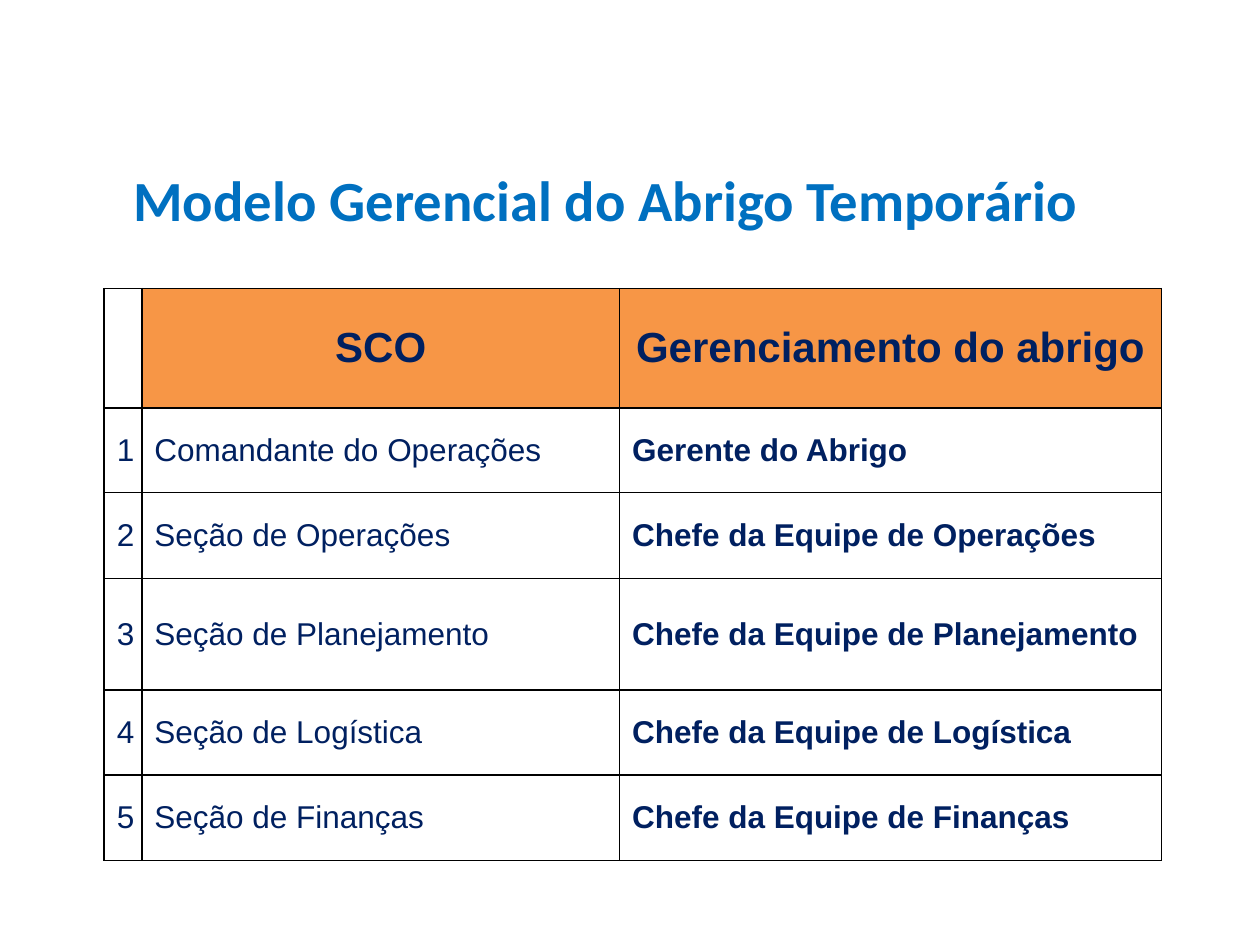
from dataclasses import dataclass

from lxml import etree
from pptx import Presentation
from pptx.dml.color import RGBColor
from pptx.enum.text import MSO_ANCHOR, PP_ALIGN
from pptx.oxml.ns import qn
from pptx.util import Cm, Pt

MIDDLE = MSO_ANCHOR.MIDDLE
LEFT, CENTER, JUSTIFY = PP_ALIGN.LEFT, PP_ALIGN.CENTER, PP_ALIGN.JUSTIFY


@dataclass(frozen=True)
class Theme:
    blue: RGBColor = RGBColor(0x00, 0x70, 0xC0)
    navy: RGBColor = RGBColor(0x00, 0x20, 0x60)
    orange: RGBColor = RGBColor(0xF7, 0x96, 0x46)
    line: str = "000000"
    title: Pt = Pt(32.4)
    head: Pt = Pt(24)
    body: Pt = Pt(18)


theme = Theme()
INDENT = Cm(0.97)


def add_borders(cell):
    props = cell._tc.get_or_add_tcPr()
    for spot, side in enumerate(("lnL", "lnR", "lnT", "lnB")):
        line = etree.Element(qn(f"a:{side}"), w=str(Pt(1)))
        fill = etree.SubElement(line, qn("a:solidFill"))
        etree.SubElement(fill, qn("a:srgbClr"), val=theme.line)
        props.insert(spot, line)


def set_font(para, name, size, color, bold):
    font = para.font
    font.name, font.size, font.bold = name, size, bold
    font.color.rgb = color


prs = Presentation()
prs.slide_width, prs.slide_height = Cm(25.4), Cm(19.05)
slide = prs.slides.add_slide(prs.slide_layouts[5])

title = slide.shapes.title
title.left, title.top, title.width, title.height = Cm(1.5), Cm(2.41), Cm(21.41), Cm(3.18)
title.text_frame.text = "Modelo Gerencial do Abrigo Temporário"
title.text_frame.vertical_anchor = MIDDLE
para = title.text_frame.paragraphs[0]
para.alignment = CENTER
set_font(para, "Calibri", theme.title, theme.blue, True)

rows = [
    ("", "SCO", "Gerenciamento do abrigo "),
    ("1", "Comandante do Operações", "Gerente do Abrigo"),
    ("2", "Seção de Operações", "Chefe da Equipe de Operações"),
    ("3", "Seção de Planejamento", "Chefe da Equipe de Planejamento"),
    ("4", "Seção de Logística", "Chefe da Equipe de Logística"),
    ("5", "Seção de Finanças", "Chefe da Equipe de Finanças"),
]
widths = [0.76, 9.63, 10.92]
heights = [2.4, 1.71, 1.73, 2.25, 1.71, 1.73]

frame = slide.shapes.add_table(
    len(rows), len(widths), Cm(2.1), Cm(5.82), Cm(sum(widths)), Cm(sum(heights))
)
table = frame.table
table.first_row = table.horz_banding = False
for col, width in zip(table.columns, widths):
    col.width = Cm(width)

for r, (texts, height) in enumerate(zip(rows, heights)):
    table.rows[r].height = Cm(height)
    for c, text in enumerate(texts):
        cell = table.cell(r, c)
        cell.vertical_anchor = MIDDLE
        head = r == 0
        if head and text:
            cell.fill.solid()
            cell.fill.fore_color.rgb = theme.orange
        else:
            cell.fill.background()
        add_borders(cell)
        if not text:
            continue
        cell.text = text
        para = cell.text_frame.paragraphs[0]
        para.alignment = CENTER if head else JUSTIFY if c else LEFT
        props = para._p.get_or_add_pPr()
        props.set("marL", str(INDENT))
        props.set("indent", str(-INDENT))
        size = theme.head if head else theme.body
        set_font(para, "Arial", size, theme.navy, head or c == 2)

prs.save("out.pptx")
